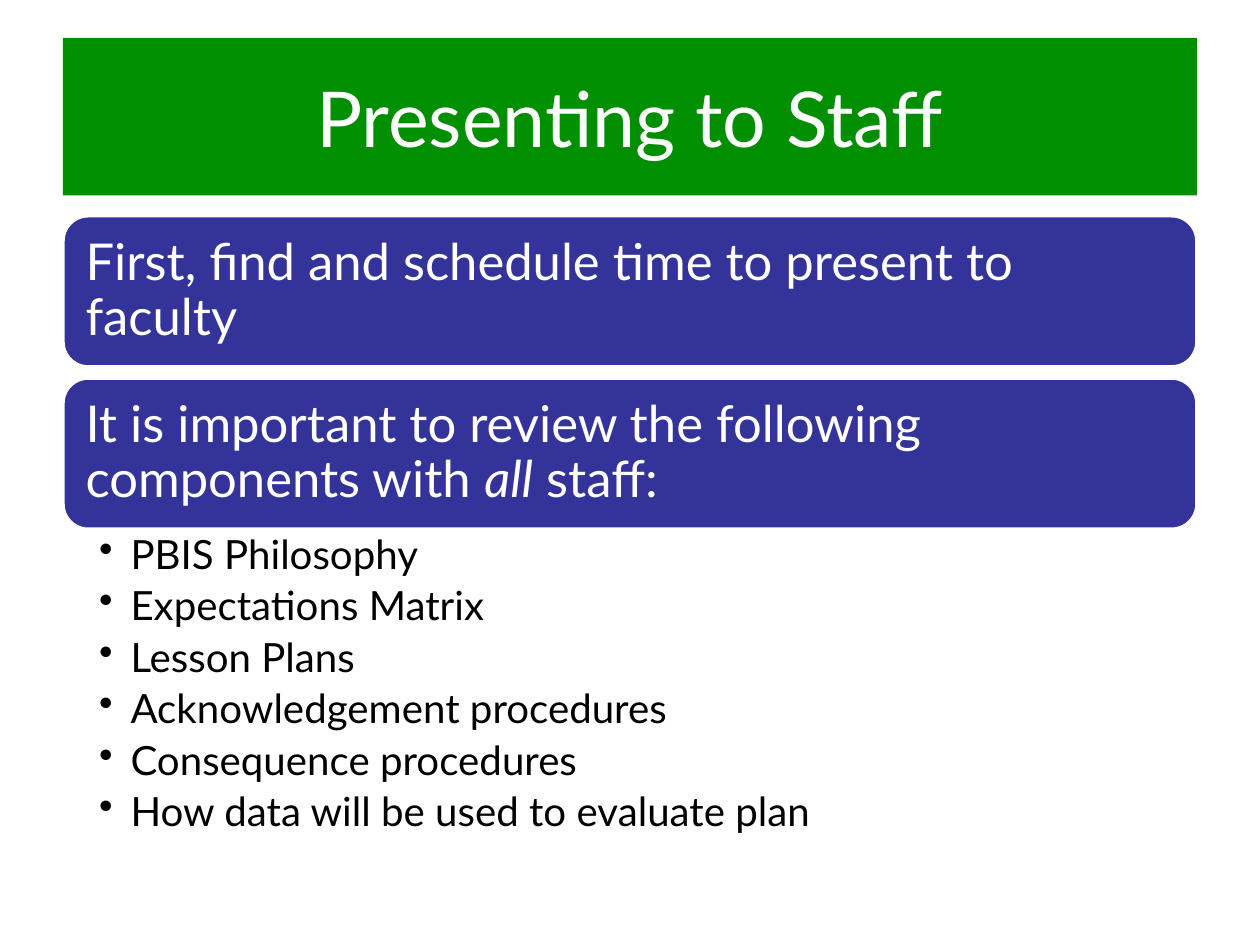
import dataclasses

import pptx
import pptx.dml.color
import pptx.enum.shapes
import pptx.enum.text
import pptx.util
from lxml import etree

Pt = pptx.util.Pt
RGB = pptx.dml.color.RGBColor.from_string
SHAPE = pptx.enum.shapes.MSO_SHAPE
ANCHOR = pptx.enum.text.MSO_ANCHOR


@dataclasses.dataclass(frozen=True)
class Theme:
    font: str = "Lato"
    green: str = "008F00"
    indigo: str = "333399"
    white: str = "FFFFFF"
    black: str = "000000"
    title: float = 44
    statement: float = 29
    bullet: float = 23


theme = Theme()
LEFT, WIDTH = 36, 648


def add_block(kind, top, height, fill):
    sp = s.shapes.add_shape(kind, Pt(LEFT), Pt(top), Pt(WIDTH), Pt(height))
    sp.shadow.inherit = False
    sp.fill.solid()
    sp.fill.fore_color.rgb = RGB(fill)
    sp.line.fill.background()
    sp.text_frame.word_wrap = True
    sp.text_frame.vertical_anchor = ANCHOR.MIDDLE
    return sp


def style(p, size, color):
    for r in p.runs:
        r.font.name = theme.font
        r.font.size = Pt(size)
        r.font.color.rgb = RGB(color)


prs = pptx.Presentation()
prs.slide_width, prs.slide_height = Pt(720), Pt(540)
s = prs.slides.add_slide(prs.slide_layouts[6])

# Statements: each is a list of (text, italic) runs
statements = [
    [("First, find and schedule time to present to faculty", False)],
    [("It is important to review the following components with ", False),
     ("all", True), (" staff:", False)],
]
card_top, card_height, card_pitch = 123.3, 86.4, 92.75
for i, runs in enumerate(statements):
    sp = add_block(SHAPE.ROUNDED_RECTANGLE, card_top + i * card_pitch,
                   card_height, theme.indigo)
    sp.line.color.rgb = RGB(theme.white)
    sp.line.width = Pt(2)
    tf = sp.text_frame
    tf.margin_left = tf.margin_right = tf.margin_top = tf.margin_bottom = Pt(8.7)
    p = tf.paragraphs[0]
    p.alignment = pptx.enum.text.PP_ALIGN.LEFT
    p.line_spacing = 0.9
    for text, italic in runs:
        r = p.add_run()
        r.text = text
        r.font.italic = italic
    style(p, theme.statement, theme.white)

# Components to review
components = [
    "PBIS Philosophy",
    "Expectations Matrix",
    "Lesson Plans",
    "Acknowledgement procedures",
    "Consequence procedures",
    "How data will be used to evaluate plan",
]
list_top = card_top + card_pitch + card_height
tf = s.shapes.add_textbox(Pt(LEFT), Pt(list_top), Pt(WIDTH), Pt(175)).text_frame
tf.word_wrap = True
tf.margin_left, tf.margin_right = Pt(20.6), Pt(16.5)
tf.margin_top = tf.margin_bottom = Pt(2.9)
tf.text = "\n".join(components)
for p in tf.paragraphs:
    p.line_spacing = 0.9
    p.space_after = Pt(0.2 * theme.bullet)
    pPr = p._p.get_or_add_pPr()
    pPr.set("marL", str(Pt(18)))
    pPr.set("indent", str(-Pt(18)))
    etree.SubElement(pPr, pptx.oxml.ns.qn("a:buChar"), char="•")
    style(p, theme.bullet, theme.black)

# Title banner
tf = add_block(SHAPE.RECTANGLE, 21.6, 90, theme.green).text_frame
tf.text = "Presenting to Staff"
p = tf.paragraphs[0]
p.alignment = pptx.enum.text.PP_ALIGN.CENTER
style(p, theme.title, theme.white)

prs.save("out.pptx")
